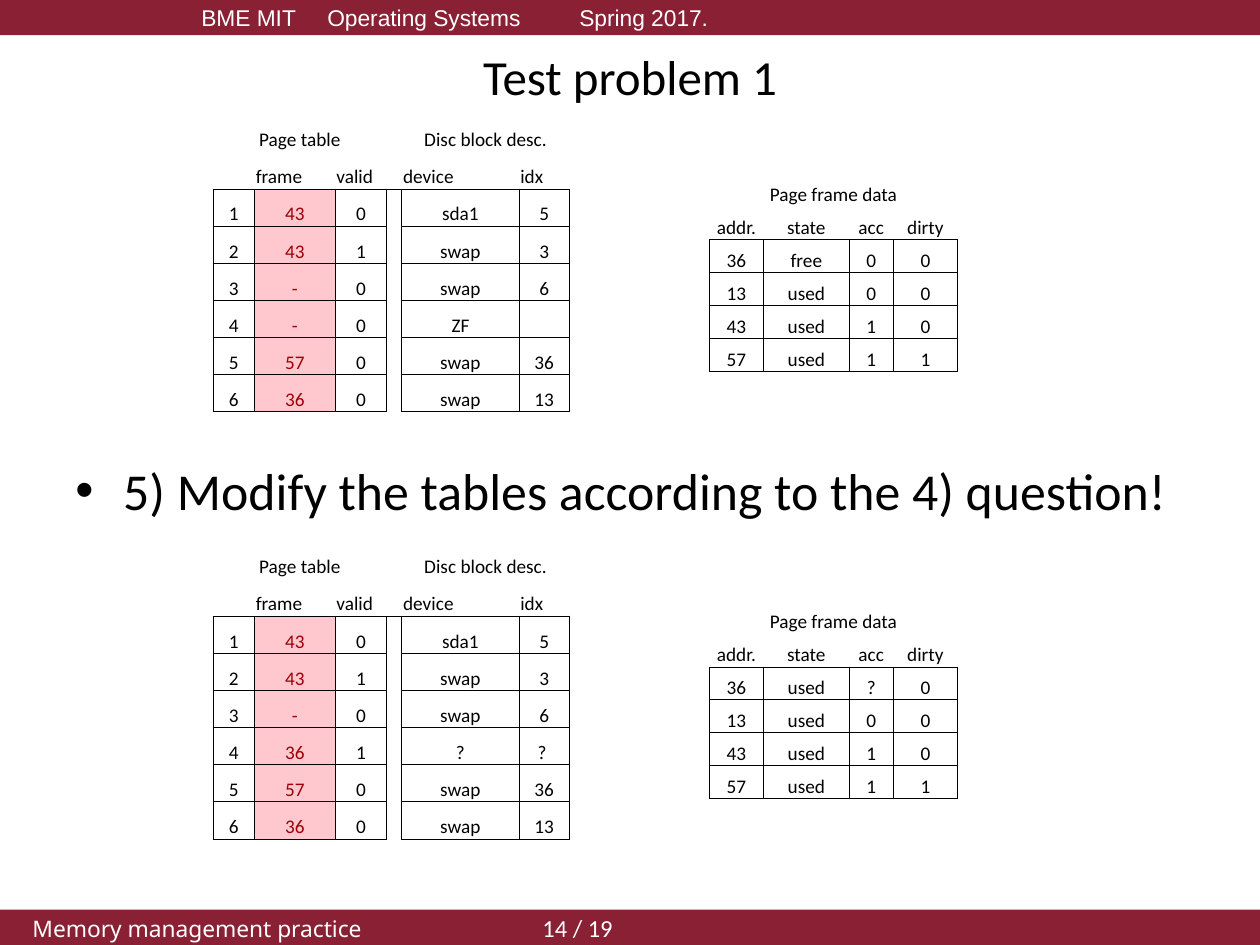
"""Build the "Test problem 1" slide with memory tables before and after the change."""
from dataclasses import dataclass
from typing import NamedTuple

from lxml.etree import SubElement
from pptx import Presentation
from pptx.dml.color import RGBColor
from pptx.enum.shapes import MSO_SHAPE as Preset
from pptx.enum.text import MSO_ANCHOR as Anchor, PP_ALIGN as Align
from pptx.oxml.ns import qn
from pptx.util import Inches, Pt

COLUMNS, ROWS = 1000, 750
UNIT = Inches(10) // COLUMNS
NO_STYLE = "{2D5ABB26-0587-4C30-8999-92F81FD0307C}"


@dataclass(frozen=True)
class Theme:
    bar: str = "892034"
    light: str = "FFFFFF"
    ink: str = "000000"
    mark_fill: str = "FFC7CE"
    mark_ink: str = "9C0006"
    font: str = "Calibri"
    header_font: str = "Arial"
    footer_font: str = "Noto Sans"
    title_size: float = 28
    body_size: float = 29.6
    cell_size: float = 11
    bar_size: float = 13
    number_size: float = 14
    border: float = 0.5


class Area(NamedTuple):
    left: int
    top: int
    width: int
    height: int

    def lengths(self) -> list[int]:
        return [value * UNIT for value in self]


class Span(NamedTuple):
    text: str
    font: str
    size: float


@dataclass(frozen=True)
class Layout:
    left: int
    height: int
    widths: tuple[int, ...]
    titles: tuple[tuple[str, int, int], ...]
    labels: str
    label_align: Align
    spacer: int | None = None
    marked: int | None = None


THEME = Theme()
PAGES = Layout(169, 236, (33, 64, 41, 12, 93, 40),
               (("Page table", 0, 2), ("Disc block desc.", 4, 5)),
               ",frame,valid,,device,idx", Align.LEFT, spacer=3, marked=1)
FRAMES = Layout(563, 157, (43, 68, 35, 51), (("Page frame data", 0, 3),),
                "addr.,state,acc,dirty", Align.CENTER)

PAGES_BEFORE = ("1,43,0,,sda1,5", "2,43,1,,swap,3", "3,-,0,,swap,6",
                "4,-,0,,ZF,", "5,57,0,,swap,36", "6,36,0,,swap,13")
PAGES_AFTER = (*PAGES_BEFORE[:3], "4,36,1,,?,? ", *PAGES_BEFORE[4:])
FRAMES_BEFORE = ("36,free,0,0", "13,used,0,0", "43,used,1,0", "57,used,1,1")
FRAMES_AFTER = ("36,used,?,0", *FRAMES_BEFORE[1:])


def style(span, font: str, size: float, color: str) -> None:
    span.font.name = font
    span.font.size = Pt(size)
    span.font.color.rgb = RGBColor.from_string(color)


def draw_bar(page, top: int, indent: int, spans: list[Span]) -> None:
    bar = page.shapes.add_shape(Preset.RECTANGLE, *Area(0, top, COLUMNS, 28).lengths())
    bar.shadow.inherit = False
    bar.fill.solid()
    bar.fill.fore_color.rgb = RGBColor.from_string(THEME.bar)
    bar.line.fill.background()
    bar.text_frame.vertical_anchor = Anchor.MIDDLE
    para = bar.text_frame.paragraphs[0]
    para.alignment = Align.LEFT
    properties = para._p.get_or_add_pPr()
    properties.set("marL", str(indent * UNIT))
    properties.set("defTabSz", str(Inches(1)))
    for text, font, size in spans:
        span = para.add_run()
        span.text = text
        style(span, font, size, THEME.light)


def draw_text(page, area: Area, text: str, size: float, bullet: bool = False) -> None:
    frame = page.shapes.add_textbox(*area.lengths()).text_frame
    frame.word_wrap = True
    frame.text = text
    para = frame.paragraphs[0]
    if bullet:
        properties = para._p.get_or_add_pPr()
        properties.set("marL", str(38 * UNIT))
        properties.set("indent", str(-38 * UNIT))
        SubElement(properties, qn("a:buFont"), typeface="Arial")
        SubElement(properties, qn("a:buChar"), char="•")
    else:
        frame.vertical_anchor = Anchor.MIDDLE
        para.alignment = Align.CENTER
    style(para.runs[0], THEME.font, size, THEME.ink)


def draw_borders(cell, sides: str) -> None:
    for side in sides:
        line = SubElement(cell._tc.get_or_add_tcPr(), qn(f"a:ln{side}"),
                          w=str(Pt(THEME.border)))
        fill = SubElement(line, qn("a:solidFill"))
        SubElement(fill, qn("a:srgbClr"), val=THEME.ink)


def fill_cell(cell, text: str, align: Align, marked: bool = False) -> None:
    cell.margin_left = cell.margin_right = cell.margin_top = UNIT
    cell.margin_bottom = 0
    cell.vertical_anchor = Anchor.BOTTOM
    if marked:
        cell.fill.solid()
        cell.fill.fore_color.rgb = RGBColor.from_string(THEME.mark_fill)
    else:
        cell.fill.background()
    cell.text_frame.text = text
    para = cell.text_frame.paragraphs[0]
    para.alignment = align
    for span in para.runs:
        style(span, THEME.font, THEME.cell_size,
              THEME.mark_ink if marked else THEME.ink)
    if not text:
        SubElement(para._p, qn("a:endParaRPr"), sz=str(int(THEME.cell_size * 100)))


def draw_table(page, layout: Layout, top: int, records: tuple[str, ...]) -> None:
    count = len(records) + 2
    area = Area(layout.left, top, sum(layout.widths), layout.height)
    graphic = page.shapes.add_table(count, len(layout.widths), *area.lengths())
    table = graphic.table
    table.first_row = table.horz_banding = False
    table._tbl.tblPr.find(qn("a:tableStyleId")).text = NO_STYLE
    for column, width in zip(table.columns, layout.widths):
        column.width = width * UNIT
    for row in table.rows:
        row.height = layout.height * UNIT // count

    titles = {first: text for text, first, last in layout.titles}
    for index, label in enumerate(layout.labels.split(",")):
        fill_cell(table.cell(0, index), titles.get(index, ""), Align.CENTER)
        fill_cell(table.cell(1, index), label, layout.label_align)
    for text, first, last in layout.titles:
        table.cell(0, first).merge(table.cell(0, last))
    if layout.spacer is not None:
        table.cell(1, layout.spacer - 1).merge(table.cell(1, layout.spacer))

    for row, record in enumerate(records, start=2):
        for index, text in enumerate(record.split(",")):
            cell = table.cell(row, index)
            draw_borders(cell, "LR" if index == layout.spacer else "LRTB")
            fill_cell(cell, text, Align.CENTER, index == layout.marked)


def main() -> None:
    deck = Presentation()
    deck.slide_width, deck.slide_height = COLUMNS * UNIT, ROWS * UNIT
    page = deck.slides.add_slide(deck.slide_layouts[6])
    draw_bar(page, 0, 150, [Span("BME MIT\tOperating Systems\tSpring 2017.",
                                 THEME.header_font, THEME.bar_size)])
    draw_bar(page, ROWS - 28, 16, [
        Span("Memory management practice\t\t ", THEME.footer_font, THEME.bar_size),
        Span("14 / 19", THEME.font, THEME.number_size)])
    draw_text(page, Area(50, 30, 900, 61), "Test problem 1", THEME.title_size)
    draw_text(page, Area(50, 359, 900, 71),
              "5) Modify the tables according to the 4) question!",
              THEME.body_size, bullet=True)
    for top, pages, frames in ((91, PAGES_BEFORE, FRAMES_BEFORE),
                               (430, PAGES_AFTER, FRAMES_AFTER)):
        draw_table(page, PAGES, top, pages)
        draw_table(page, FRAMES, top + 47, frames)
    deck.save("out.pptx")


if __name__ == "__main__":
    main()
